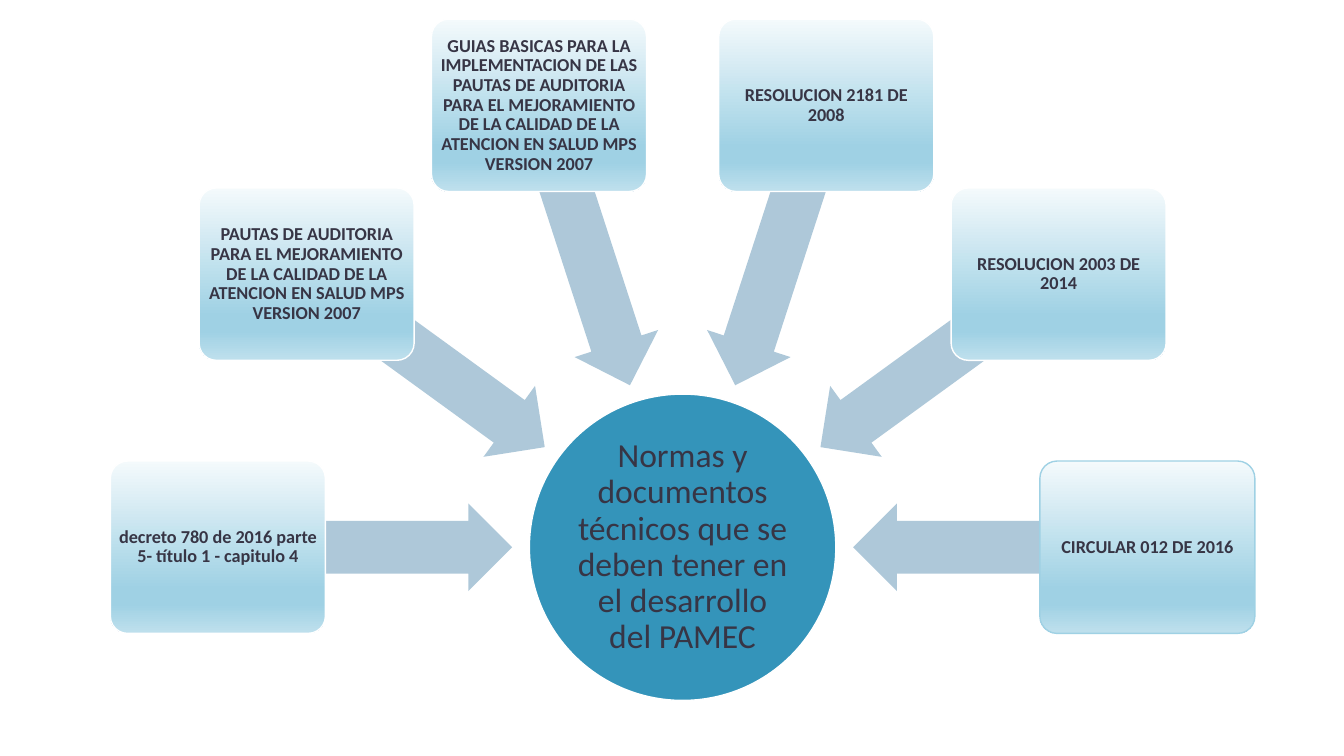
"""Build a slide of standards and documents pointing at a central circle."""
from dataclasses import dataclass
from math import cos, radians, sin

from lxml import etree
from pptx import Presentation, util as u
from pptx.dml.color import RGBColor
from pptx.enum import shapes, text
from pptx.oxml.ns import qn


@dataclass(frozen=True)
class Theme:
    font: str = "Calibri"
    ink: str = "373545"
    hub: str = "3494BA"
    arrow: str = "AEC8D9"
    outline: str = "FFFFFF"
    accent_outline: str = "9FD1E4"
    card_stops: tuple = ((0, "F4FAFC"), (74, "9FD1E4"), (83, "9FD1E4"), (100, "BFE0ED"))
    hub_size: int = 24
    card_size: int = 13


class RadialPage:
    COLUMNS = 100
    CENTER = (50.79, 40.73)

    def __init__(self, deck, theme):
        self.theme = theme
        self.page = deck.slides.add_slide(deck.slide_layouts[6])
        self.cell = deck.slide_width / self.COLUMNS

    def shape(self, kind, columns, rows, radius=0, angle=0):
        x = self.CENTER[0] + radius * cos(radians(angle)) - columns / 2
        y = self.CENTER[1] + radius * sin(radians(angle)) - rows / 2
        lengths = [round(value * self.cell) for value in (x, y, columns, rows)]
        shape = self.page.shapes.add_shape(kind, *lengths)
        shape.shadow.inherit = False
        return shape

    def paint(self, shape, color):
        shape.fill.solid()
        shape.fill.fore_color.rgb = RGBColor.from_string(color)

    def border(self, shape, color):
        shape.line.color.rgb = RGBColor.from_string(color)
        shape.line.width = u.Pt(1)

    def label(self, shape, words, size, inset, bold=False):
        frame = shape.text_frame
        frame.text = words
        frame.word_wrap = True
        frame.vertical_anchor = text.MSO_ANCHOR.MIDDLE
        frame.margin_left = frame.margin_right = u.Inches(inset)
        frame.margin_top = frame.margin_bottom = u.Inches(inset)
        para = frame.paragraphs[0]
        para.alignment = text.PP_ALIGN.CENTER
        para.line_spacing = 0.9
        font = para.runs[0].font
        font.name, font.size, font.bold = self.theme.font, u.Pt(size), bold
        font.color.rgb = RGBColor.from_string(self.theme.ink)

    def hub(self, words):
        circle = self.shape(shapes.MSO_SHAPE.OVAL, 22.8, 22.8)
        self.paint(circle, self.theme.hub)
        self.border(circle, self.theme.outline)
        self.label(circle, words, self.theme.hub_size, 0.02)

    def arrow(self, angle):
        arrow = self.shape(shapes.MSO_SHAPE.LEFT_ARROW, 21.9, 6.53, 23.63, angle)
        arrow.adjustments[0], arrow.adjustments[1] = 0.6, 0.5
        arrow.rotation = angle
        self.paint(arrow, self.theme.arrow)
        arrow.line.fill.background()

    def card(self, words, angle, outline):
        card = self.shape(shapes.MSO_SHAPE.ROUNDED_RECTANGLE, 16, 12.83, 34.58, angle)
        card.adjustments[0] = 0.1
        card.fill.gradient()
        card.fill.gradient_angle = 270
        stops = card._element.spPr.find(".//" + qn("a:gsLst"))
        stops.clear()
        for percent, color in self.theme.card_stops:
            stop = etree.SubElement(stops, qn("a:gs"), pos=str(percent * 1000))
            etree.SubElement(stop, qn("a:srgbClr"), val=color)
        self.border(card, outline)
        self.label(card, words, self.theme.card_size, 0.03, bold=True)


DOCUMENTS = (
    "decreto 780 de 2016 parte 5- título 1 - capitulo 4",
    "PAUTAS DE AUDITORIA PARA EL MEJORAMIENTO DE LA CALIDAD DE LA "
    "ATENCION EN SALUD MPS VERSION 2007",
    "GUIAS BASICAS PARA LA IMPLEMENTACION DE LAS PAUTAS DE AUDITORIA PARA EL "
    "MEJORAMIENTO DE LA CALIDAD DE LA ATENCION EN SALUD MPS VERSION 2007",
    "RESOLUCION 2181 DE 2008",
    "RESOLUCION 2003 DE 2014",
    "CIRCULAR 012 DE 2016",
)


def main():
    deck = Presentation()
    deck.slide_width, deck.slide_height = u.Inches(13.33), u.Inches(7.5)
    theme = Theme()
    page = RadialPage(deck, theme)
    page.hub("Normas y documentos técnicos que se deben tener en el desarrollo del PAMEC")
    step = 180 / (len(DOCUMENTS) - 1)
    for index, words in enumerate(DOCUMENTS):
        angle = 180 + index * step
        is_last = index == len(DOCUMENTS) - 1
        page.arrow(angle)
        page.card(words, angle, theme.accent_outline if is_last else theme.outline)
    deck.save("out.pptx")


if __name__ == "__main__":
    main()
